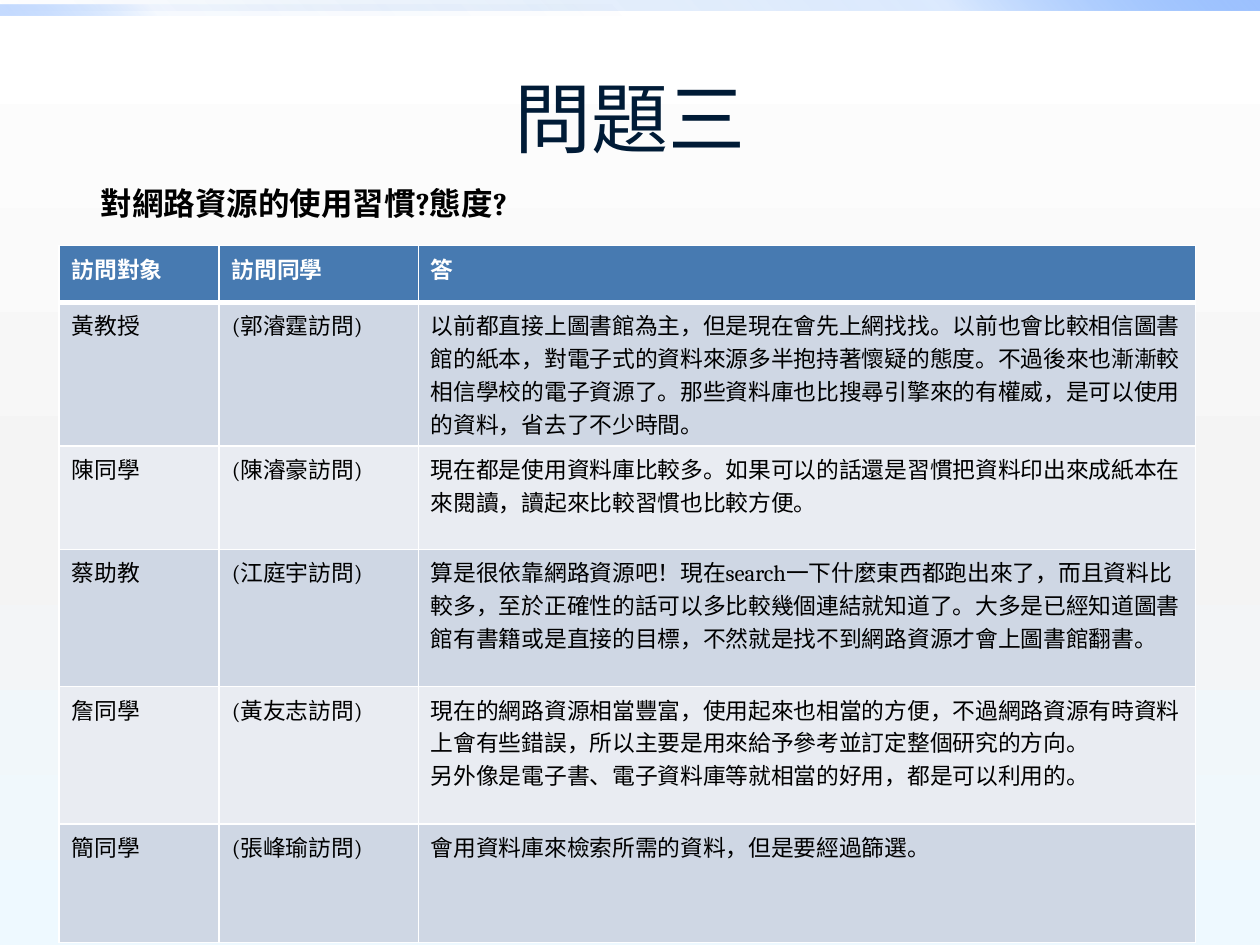
from dataclasses import dataclass

from lxml import etree
from pptx import Presentation
from pptx.dml.color import RGBColor
from pptx.enum.shapes import MSO_SHAPE
from pptx.enum.text import MSO_ANCHOR, PP_ALIGN
from pptx.oxml.ns import nsdecls, qn
from pptx.oxml import parse_xml
from pptx.util import Inches, Pt

RECT = MSO_SHAPE.RECTANGLE
MIDDLE = MSO_ANCHOR.MIDDLE
CENTER = PP_ALIGN.CENTER
WIDE, HIGH = 10, 7.5


@dataclass(frozen=True)
class Theme:
    head_font: str = "Roboto"
    body_font: str = "Cambria"
    title_size: int = 44
    lead_size: int = 18
    cell_size: int = 13
    navy: str = "001B36"
    black: str = "000000"
    white: str = "FFFFFF"
    head: str = "477AB1"
    bands: tuple = ("CFD7E4", "E9ECF2")
    # Gradient stops: place, colour, opacity, all shares in percent
    back: tuple = ((0, "FFFFFF", 100), (55, "F4F4F4", 100), (100, "EEF9FF", 100))
    top_bar: tuple = ((0, "0058B7", 0), (75, "4F95FF", 20), (100, "9EC2FF", 100))
    low_bar: tuple = ((0, "0058B7", 0), (75, "4F95FF", 5), (100, "9EC2FF", 60))


THEME = Theme()
COLS = (1.27, 1.58, 6.17)
ROWS = (0.45, 1.13, 0.82, 1.09, 1.09, 0.94)

# Each cell is a tuple of paragraphs
TABLE = (
    (("訪問對象",), ("訪問同學",), ("答",)),
    (("黃教授",), ("(郭濬霆訪問)",),
     ("以前都直接上圖書館為主，但是現在會先上網找找。以前也會比較相信圖書館的紙本，"
      "對電子式的資料來源多半抱持著懷疑的態度。不過後來也漸漸較相信學校的電子資源了。"
      "那些資料庫也比搜尋引擎來的有權威，是可以使用的資料，省去了不少時間。",)),
    (("陳同學",), ("(陳濬豪訪問)",),
     ("現在都是使用資料庫比較多。如果可以的話還是習慣把資料印出來成紙本在來閱讀，"
      "讀起來比較習慣也比較方便。",)),
    (("蔡助教",), ("(江庭宇訪問)",),
     ("算是很依靠網路資源吧！現在search一下什麼東西都跑出來了，而且資料比較多，"
      "至於正確性的話可以多比較幾個連結就知道了。大多是已經知道圖書館有書籍或是直接的目標，"
      "不然就是找不到網路資源才會上圖書館翻書。",)),
    (("詹同學",), ("(黃友志訪問)",),
     ("現在的網路資源相當豐富，使用起來也相當的方便，不過網路資源有時資料上會有些錯誤，"
      "所以主要是用來給予參考並訂定整個研究的方向。",
      "另外像是電子書、電子資料庫等就相當的好用，都是可以利用的。")),
    (("簡同學",), ("(張峰瑜訪問)",),
     ("會用資料庫來檢索所需的資料，但是要經過篩選。",)),
)


def box(left, top, width, height):
    """Turn shares of the slide into lengths."""
    return (Inches(left * WIDE), Inches(top * HIGH),
            Inches(width * WIDE), Inches(height * HIGH))


def write(frame, lines, font, size, color, bold=False, align=None):
    for i, line in enumerate(lines):
        para = frame.paragraphs[0] if i == 0 else frame.add_paragraph()
        para.alignment = align
        run = para.add_run()
        run.text = line
        run.font.name = font
        run.font.size = Pt(size)
        run.font.bold = bold
        run.font.color.rgb = RGBColor.from_string(color)


def shade(parent, stops, angle):
    """Swap the solid fill of a parent for a linear gradient."""
    marks = "".join(
        f'<a:gs pos="{pos * 1000}"><a:srgbClr val="{color}">'
        f'<a:alpha val="{alpha * 1000}"/></a:srgbClr></a:gs>'
        for pos, color, alpha in stops)
    grad = parse_xml(
        f'<a:gradFill {nsdecls("a")} rotWithShape="1"><a:gsLst>{marks}</a:gsLst>'
        f'<a:lin ang="{angle * 60000}" scaled="0"/></a:gradFill>')
    parent.replace(parent.find(qn("a:solidFill")), grad)


def add_back(slide):
    slide.background.fill.solid()
    shade(slide.element.find(".//" + qn("p:bgPr")), THEME.back, 90)


def add_bar(slide, place, stops, angle):
    bar = slide.shapes.add_shape(RECT, *box(*place))
    bar.shadow.inherit = False
    bar.line.fill.background()
    bar.fill.solid()
    shade(bar.element.spPr, stops, angle)


def add_title(slide, text):
    title = slide.shapes.title
    title.left, title.top, title.width, title.height = box(0.05, 0.04, 0.9, 1 / 6)
    title.text_frame.vertical_anchor = MIDDLE
    write(title.text_frame, [text], THEME.head_font, THEME.title_size,
          THEME.navy, align=CENTER)


def add_lead(slide, text):
    frame = slide.shapes.add_textbox(*box(0.07, 0.188, 0.75, 0.095)).text_frame
    frame.word_wrap = True
    write(frame, [text], THEME.body_font, THEME.lead_size, THEME.black, bold=True)


def edge(cell, side, width):
    line = etree.SubElement(cell._tc.get_or_add_tcPr(), qn("a:ln" + side),
                            w=str(Pt(width)))
    fill = etree.SubElement(line, qn("a:solidFill"))
    etree.SubElement(fill, qn("a:srgbClr"), val=THEME.white)


def add_grid(slide):
    place = box(0.047, 0.26, sum(COLS) / WIDE, sum(ROWS) / HIGH)
    table = slide.shapes.add_table(len(ROWS), len(COLS), *place).table
    for col, width in zip(table.columns, COLS):
        col.width = Inches(width)
    for r, (height, cells) in enumerate(zip(ROWS, TABLE)):
        table.rows[r].height = Inches(height)
        top = r == 0
        for c, lines in enumerate(cells):
            cell = table.cell(r, c)
            for side in "LRTB":
                # A thick rule parts the header from the answers
                thick = (top and side == "B") or (r == 1 and side == "T")
                edge(cell, side, 3 if thick else 1)
            cell.fill.solid()
            fill = THEME.head if top else THEME.bands[(r - 1) % 2]
            cell.fill.fore_color.rgb = RGBColor.from_string(fill)
            write(cell.text_frame, lines, THEME.body_font, THEME.cell_size,
                  THEME.white if top else THEME.black, bold=top)


def main():
    deck = Presentation()
    deck.slide_width, deck.slide_height = Inches(WIDE), Inches(HIGH)
    slide = deck.slides.add_slide(deck.slide_layouts[5])
    # Backdrop
    add_back(slide)
    add_bar(slide, (0, 0, 1, 0.011), THEME.top_bar, 315)
    add_bar(slide, (0, 0.005, 0.5, 0.011), THEME.low_bar, 135)
    # Content
    add_title(slide, "問題三")
    add_grid(slide)
    add_lead(slide, "對網路資源的使用習慣?態度?")
    deck.save("out.pptx")


if __name__ == "__main__":
    main()
